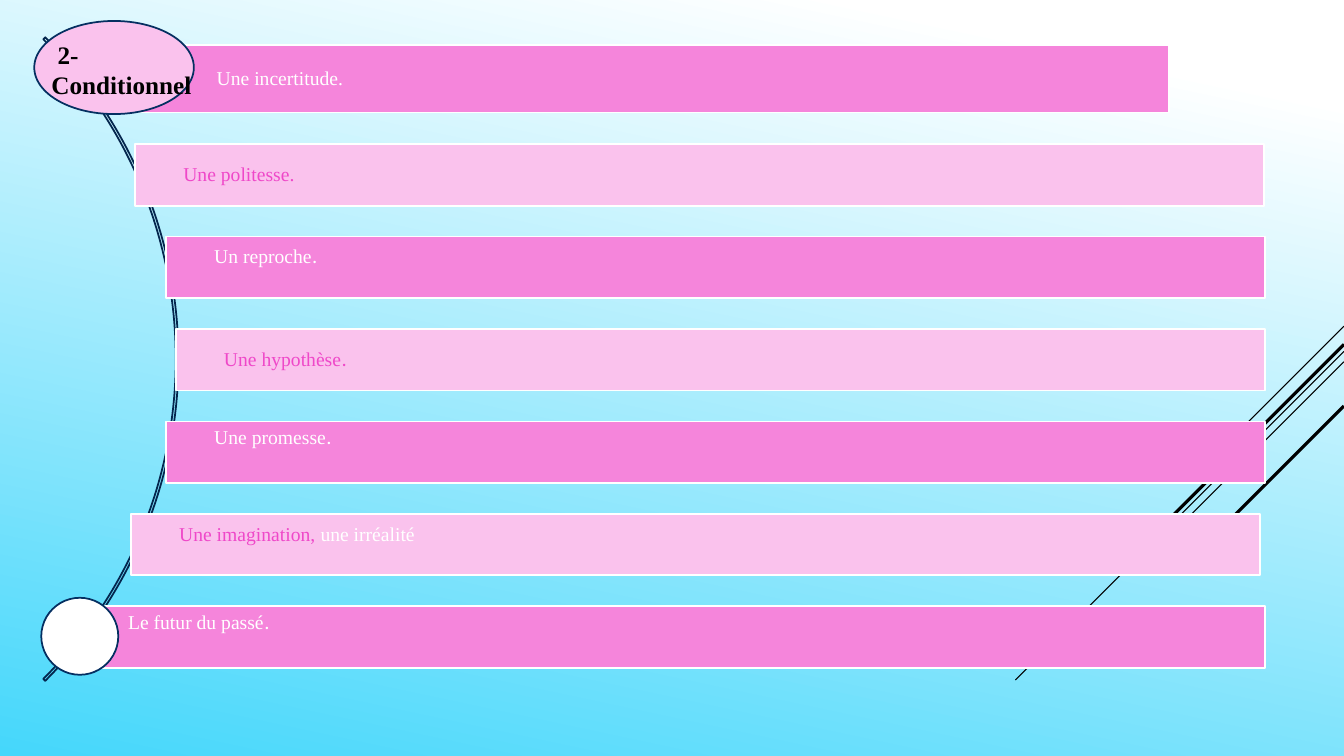
from pptx import Presentation
from pptx.dml.color import RGBColor as Rgb
from pptx.enum.shapes import MSO_CONNECTOR as Conn, MSO_SHAPE as Kind
from pptx.enum.text import MSO_ANCHOR as Anchor, MSO_AUTO_SIZE as Auto, PP_ALIGN as Align
from pptx.oxml.ns import qn
from pptx.util import Pt
from lxml.etree import SubElement as Sub

HUES = {"white": "FFFFFF", "sky": "45D7FB", "black": "000000", "navy": "04264E",
        "rim": "052F61", "rose": "F585DB", "pale": "FAC2ED", "pink": "EF48C9"}
SERIF, SANS = "Times New Roman", "League Spartan"


def hue(name):
    """Return the colour of that name."""
    return Rgb.from_string(HUES[name])


def put(item, **vals):
    """Set each given attribute on the item."""
    for key, val in vals.items():
        setattr(item, key, val)


def write(para, text, tint, font=SERIF, **vals):
    """Add a run of styled text."""
    run = para.add_run()
    run.text = text
    put(run.font, name=font, **vals)
    run.font.color.rgb = hue(tint)


def draw(slide, kind, box, fill, rim):
    """Add a flat shape in the box."""
    shape = slide.shapes.add_shape(kind, *map(Pt, box))
    shape.shadow.inherit = False
    if fill:
        shape.fill.solid()
        shape.fill.fore_color.rgb = hue(fill)
    else:
        shape.fill.background()
    shape.line.color.rgb = hue(rim)
    shape.line.width = Pt(1.25)
    return shape


def paint(slide):
    """Give the slide its gradient ground."""
    fill = slide.background.fill
    fill.gradient()
    fill.gradient_angle = 258
    for stop, tint, place in zip(fill.gradient_stops, ("white", "sky"), (0.1, 1)):
        stop.color.rgb = hue(tint)
        stop.position = place


def rays(slide, box):
    """Draw the slanted lines from the right edge of the box."""
    left, top, width, _ = box
    right = left + width
    for drop, run, size in ((0, 72, 0.75), (18, 234.7, 0.75), (25.4, 149, 0.75),
                            (13, 137.5, 2.25), (57, 100, 2.25)):
        y = top + drop
        line = slide.shapes.add_connector(
            Conn.STRAIGHT, *map(Pt, (right, y, right - run, y + run)))
        line.line.color.rgb = hue("black")
        line.line.width = Pt(size)
        Sub(line._element.spPr, qn("a:effectLst"))


def bar(slide, box, fill, parts, inset=34.5, lift=0):
    """Draw one bar with its text raised by the lift."""
    shape = draw(slide, Kind.RECTANGLE, box, fill, "white")
    frame = shape.text_frame
    put(frame, word_wrap=True, vertical_anchor=Anchor.MIDDLE, margin_left=Pt(inset),
        margin_right=Pt(3), margin_top=Pt(3), margin_bottom=Pt(3 + 2 * lift))
    para = frame.paragraphs[0]
    put(para, alignment=Align.LEFT, line_spacing=0.9)
    for part in parts:
        write(para, *part, size=Pt(14))


def stack(slide, box):
    """Draw the arc, the bars and the two discs in the box."""
    left, top, _, _ = box
    arc = draw(slide, Kind.BLOCK_ARC, (left - 547, top - 83.5, 650, 650), None, "navy")
    for at, val in enumerate((189, 27, 0.003)):
        arc.adjustments[at] = val
    bar(slide, (left + 46.3, top + 17.4, 764, 48), "rose",
        [("Une incertitude.", "white")], 84)
    draw(slide, Kind.OVAL, (left, top, 114, 66.5), "pale", "rim")
    dot = (".", "white", SANS)
    rows = (
        (72, 806.5, 0, [("Une politesse.", "pink")]),
        (94, 785, 7, [("Un reproche", "white"), dot]),
        (101, 778, 0, [("Une hypothèse", "pink"), (".", "pink", SANS)]),
        (94, 785, 10, [("Une promesse", "white"), dot]),
        (69, 806.5, 7, [("Une imagination, ", "pink"), ("une irréalité", "white")]),
        (32.5, 846.5, 10, [("Le futur du passé", "white"), dot]))
    for at, (shift, width, lift, parts) in enumerate(rows):
        fill = "rose" if at % 2 else "pale"
        bar(slide, (left + shift, top + 88 + 66 * at, width, 44), fill, parts, lift=lift)
    draw(slide, Kind.OVAL, (left + 5, top + 412, 55, 55), "white", "rim")


def head(slide, box):
    """Set the title in the box, above the other shapes."""
    title = slide.shapes.title
    put(title, **dict(zip(("left", "top", "width", "height"), map(Pt, box))))
    frame = title.text_frame
    put(frame, word_wrap=True, auto_size=Auto.NONE, vertical_anchor=Anchor.TOP)
    para = frame.paragraphs[0]
    put(para, alignment=Align.LEFT, line_spacing=1.0)
    write(para, " ", "black", SANS, size=Pt(18))
    write(para, "2-Conditionnel", "black", size=Pt(18), bold=True)
    slide.shapes._spTree.append(title._element)


def main():
    """Build and save the slide."""
    deck = Presentation()
    put(deck, slide_width=Pt(960), slide_height=Pt(540))
    slide = deck.slides.add_slide(deck.slide_layouts[5])
    paint(slide)
    rays(slide, (725, 233, 235, 253))
    stack(slide, (24.5, 15, 879, 467))
    head(slide, (29.5, 24.5, 127.5, 51))
    deck.save("out.pptx")


if __name__ == "__main__":
    main()
